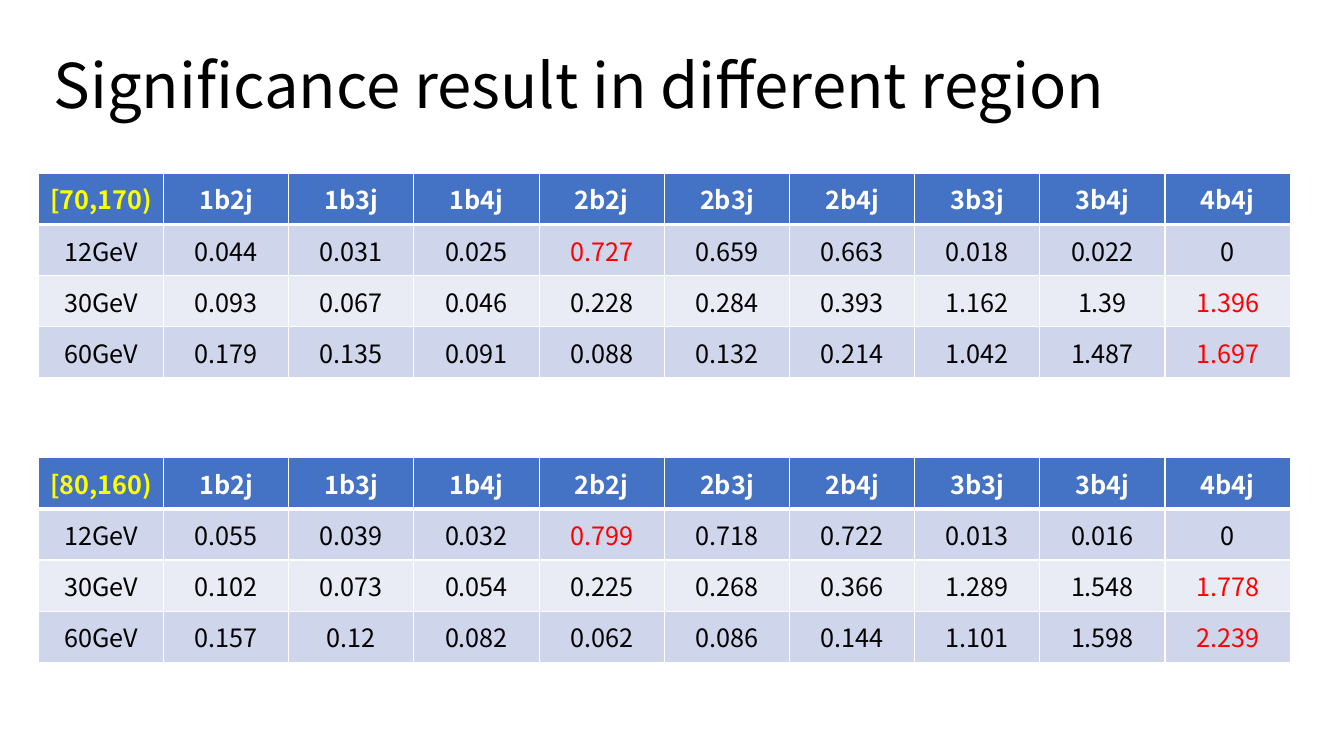
"""Build a slide with two tables of significance by region and mass."""
from lxml.etree import SubElement
from pptx import Presentation
from pptx.dml.color import RGBColor
from pptx.enum.text import MSO_ANCHOR as Anchor, MSO_AUTO_SIZE as AutoSize, PP_ALIGN as Align
from pptx.oxml.ns import qn
from pptx.util import Inches, Pt

TITLE = "Significance result in different region"
REGIONS = ["1b2j", "1b3j", "1b4j", "2b2j", "2b3j", "2b4j", "3b3j", "3b4j", "4b4j"]
WINDOWS = [
    ("[70,170)", [
        ("12GeV", [0.044, 0.031, 0.025, 0.727, 0.659, 0.663, 0.018, 0.022, 0]),
        ("30GeV", [0.093, 0.067, 0.046, 0.228, 0.284, 0.393, 1.162, 1.39, 1.396]),
        ("60GeV", [0.179, 0.135, 0.091, 0.088, 0.132, 0.214, 1.042, 1.487, 1.697]),
    ]),
    ("[80,160)", [
        ("12GeV", [0.055, 0.039, 0.032, 0.799, 0.718, 0.722, 0.013, 0.016, 0]),
        ("30GeV", [0.102, 0.073, 0.054, 0.225, 0.268, 0.366, 1.289, 1.548, 1.778]),
        ("60GeV", [0.157, 0.12, 0.082, 0.062, 0.086, 0.144, 1.101, 1.598, 2.239]),
    ]),
]
FONT = "Noto Sans CJK SC"
COLORS = {
    "header": "4472C4", "odd": "CFD5EA", "even": "E9EBF5", "border": "FFFFFF",
    "header_text": "FFFFFF", "window": "FFFF00", "text": "000000", "best": "FF0000",
}
LEFT, TOP, PITCH = 0.38, 1.72, 2.82
TABLE_WIDTH, TABLE_HEIGHT = 12.42, 2.03


def write(frame, text, size=18, color="text", bold=False, align=Align.CENTER):
    """Put one formatted line of text into a frame."""
    para = frame.paragraphs[0]
    para.alignment = align
    span = para.add_run()
    span.text = text
    span.font.name = FONT
    span.font.size = Pt(size)
    span.font.bold = bold
    span.font.color.rgb = RGBColor.from_string(COLORS[color])
    return para


def add_borders(cell, top, bottom):
    """Draw the four cell borders, with top and bottom widths in points."""
    properties = cell._tc.get_or_add_tcPr()
    for side, width in (("L", 1), ("R", 1), ("T", top), ("B", bottom)):
        line = SubElement(properties, qn(f"a:ln{side}"), w=str(Pt(width)))
        fill = SubElement(line, qn("a:solidFill"))
        SubElement(fill, qn("a:srgbClr"), val=COLORS["border"])


def style_cell(cell, row):
    """Set the fill, borders, margins and anchor that a row calls for."""
    add_borders(cell, top=3 if row == 1 else 1, bottom=3 if row == 0 else 1)
    band = "header" if row == 0 else "odd" if row % 2 else "even"
    cell.fill.solid()
    cell.fill.fore_color.rgb = RGBColor.from_string(COLORS[band])
    cell.margin_left = cell.margin_right = cell.margin_top = cell.margin_bottom = 0
    cell.vertical_anchor = Anchor.MIDDLE


def add_significance_table(page, window, masses, top):
    """Add one table, marking the best region of each mass in red."""
    row_count, column_count = len(masses) + 1, len(REGIONS) + 1
    table = page.shapes.add_table(
        row_count, column_count, Inches(LEFT), Inches(top),
        Inches(TABLE_WIDTH), Inches(TABLE_HEIGHT)).table
    rows = [[(window, "window")] + [(name, "header_text") for name in REGIONS]]
    for mass, values in masses:
        best = max(values)
        rows.append([(mass, "text")] + [
            (str(value), "best" if value == best else "text") for value in values])
    for row, entries in enumerate(rows):
        for column, (text, color) in enumerate(entries):
            cell = table.cell(row, column)
            style_cell(cell, row)
            write(cell.text_frame, text, color=color, bold=row == 0)


def add_title(page):
    """Place and format the title placeholder."""
    title = page.shapes.title
    title.left, title.top = Inches(0.43), Inches(0.5)
    title.width, title.height = Inches(12.04), Inches(0.84)
    frame = title.text_frame
    frame.auto_size = AutoSize.NONE
    frame.word_wrap = True
    frame.vertical_anchor = Anchor.TOP
    write(frame, TITLE, size=44, align=Align.LEFT).line_spacing = 0.9


def main():
    """Build and save the deck."""
    deck = Presentation()
    deck.slide_width, deck.slide_height = Inches(13.33), Inches(7.5)
    page = deck.slides.add_slide(deck.slide_layouts[5])
    add_title(page)
    for index, (window, masses) in enumerate(WINDOWS):
        add_significance_table(page, window, masses, TOP + index * PITCH)
    deck.save("out.pptx")


if __name__ == "__main__":
    main()
